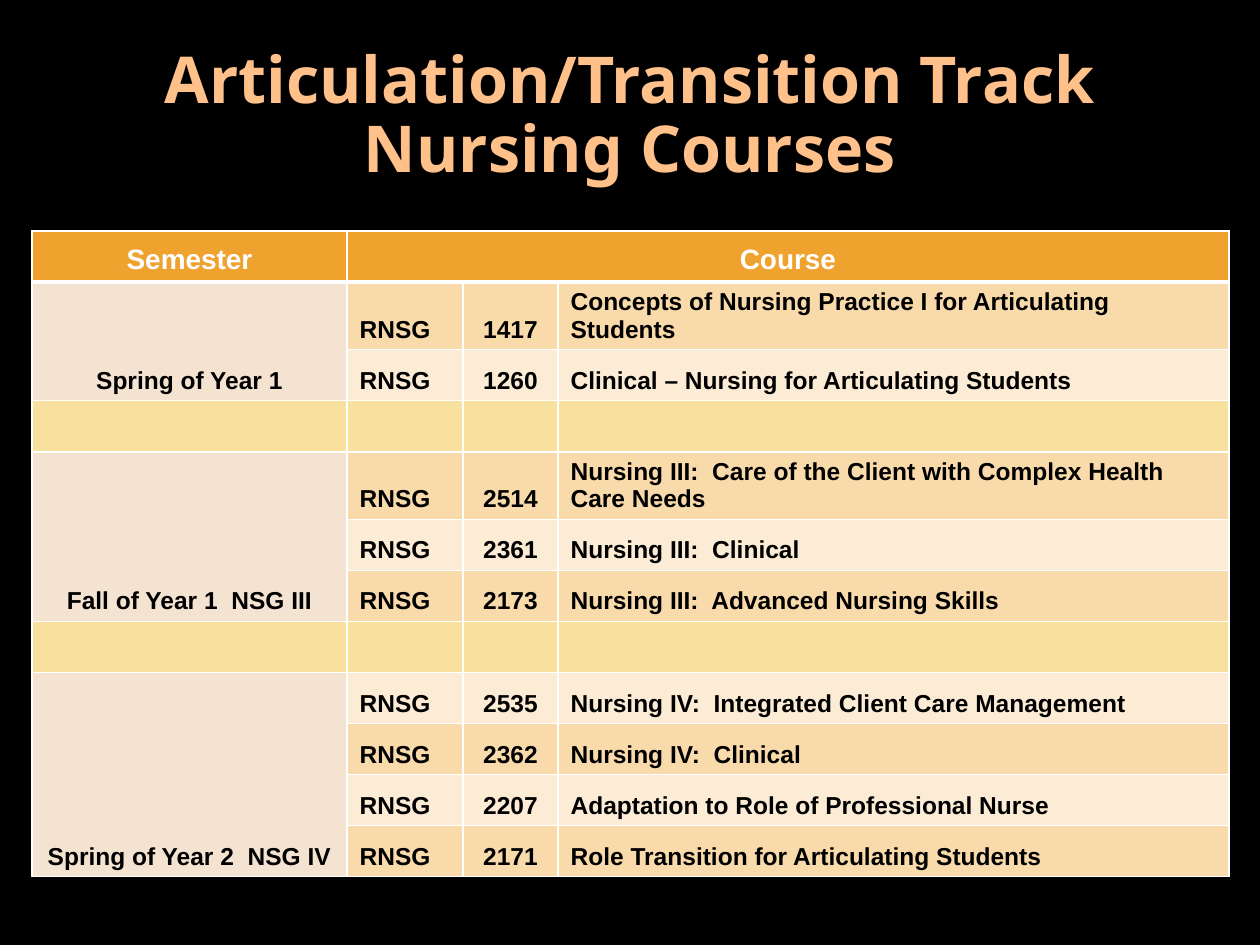
from lxml import etree
from pptx import Presentation
from pptx import util as u
from pptx.dml.color import RGBColor
from pptx.enum import text
from pptx.oxml.ns import qn

TITLE = "Articulation/Transition Track Nursing Courses"
HEADERS = ["Semester", "Course"]
SUBJECT = "RNSG"
SEMESTERS = [
    ("Spring of Year 1", [
        ("1417", "Concepts of Nursing Practice I for Articulating Students"),
        ("1260", "Clinical – Nursing for Articulating Students"),
    ]),
    ("Fall of Year 1  NSG III", [
        ("2514", "Nursing III:  Care of the Client with Complex Health Care Needs"),
        ("2361", "Nursing III:  Clinical"),
        ("2173", "Nursing III:  Advanced Nursing Skills"),
    ]),
    ("Spring of Year 2  NSG IV", [
        ("2535", "Nursing IV:  Integrated Client Care Management"),
        ("2362", "Nursing IV:  Clinical"),
        ("2207", "Adaptation to Role of Professional Nurse"),
        ("2171", "Role Transition for Articulating Students"),
    ]),
]
COLORS = {
    "back": "000000", "title": "FFC089", "header": "F0A22E",
    "semester": "F5E3D1", "gap": "F8E19F", "dark": "F9DAAB",
    "light": "FCECD5", "white": "FFFFFF", "ink": "000000",
}
COLUMNS = [315, 116, 95, 671]
ROW = 51
LEFT, CENTER = text.PP_ALIGN.LEFT, text.PP_ALIGN.CENTER


def px(n):
    return u.Emu(round(n * 914400 / 126))


def rgb(name):
    return RGBColor.from_string(COLORS[name])


def write(tf, words, size=14, color="ink", font="Arial", align=LEFT):
    p = tf.paragraphs[0]
    p.alignment = align
    r = p.add_run()
    r.text = words
    r.font.size, r.font.name, r.font.bold = u.Pt(size), font, True
    r.font.color.rgb = rgb(color)
    return p


def style_cell(cell, fill, top=1, bottom=1):
    pr = cell._tc.get_or_add_tcPr()
    for side, width in zip("LRTB", (1, 1, top, bottom)):
        ln = etree.SubElement(pr, qn("a:ln" + side), w=str(u.Pt(width)))
        solid = etree.SubElement(ln, qn("a:solidFill"))
        etree.SubElement(solid, qn("a:srgbClr"), val=COLORS["white"])
    cell.fill.solid()
    cell.fill.fore_color.rgb = rgb(fill)
    cell.vertical_anchor = text.MSO_ANCHOR.BOTTOM


prs = Presentation()
prs.slide_width, prs.slide_height = px(1260), px(945)
s = prs.slides.add_slide(prs.slide_layouts[5])
s.background.fill.solid()
s.background.fill.fore_color.rgb = rgb("back")

title = s.shapes.title
title.left, title.top, title.width, title.height = map(px, (63, 38, 1134, 158))
tf = title.text_frame
tf.word_wrap = True
tf.auto_size = text.MSO_AUTO_SIZE.NONE
tf.vertical_anchor = text.MSO_ANCHOR.MIDDLE
p = write(tf, TITLE, size=36.9, color="title", font="Noto Sans", align=CENTER)
p.line_spacing = 0.9

rows = sum(len(courses) for _, courses in SEMESTERS) + len(SEMESTERS)
table = s.shapes.add_table(rows, len(COLUMNS), px(32), px(231),
                           px(sum(COLUMNS)), px(rows * ROW)).table
for column, width in zip(table.columns, COLUMNS):
    column.width = px(width)
for row in table.rows:
    row.height = px(ROW)

for c in range(len(COLUMNS)):
    style_cell(table.cell(0, c), "header", bottom=3)
table.cell(0, 1).merge(table.cell(0, 3))
for c, words in enumerate(HEADERS):
    write(table.cell(0, c).text_frame, words, size=16, color="white", align=CENTER)

row, band = 1, 0
for semester, courses in SEMESTERS:
    if row > 1:
        for c in range(len(COLUMNS)):
            style_cell(table.cell(row, c), "gap")
        row += 1
    first = table.cell(row, 0)
    for number, name in courses:
        top = 3 if row == 1 else 1
        style_cell(table.cell(row, 0), "semester", top=top)
        for c, words in enumerate((SUBJECT, number, name), 1):
            cell = table.cell(row, c)
            style_cell(cell, ("dark", "light")[band % 2], top=top)
            write(cell.text_frame, words, align=CENTER if c == 2 else LEFT)
        row, band = row + 1, band + 1
    first.merge(table.cell(row - 1, 0))
    write(first.text_frame, semester, align=CENTER)

prs.save("out.pptx")
